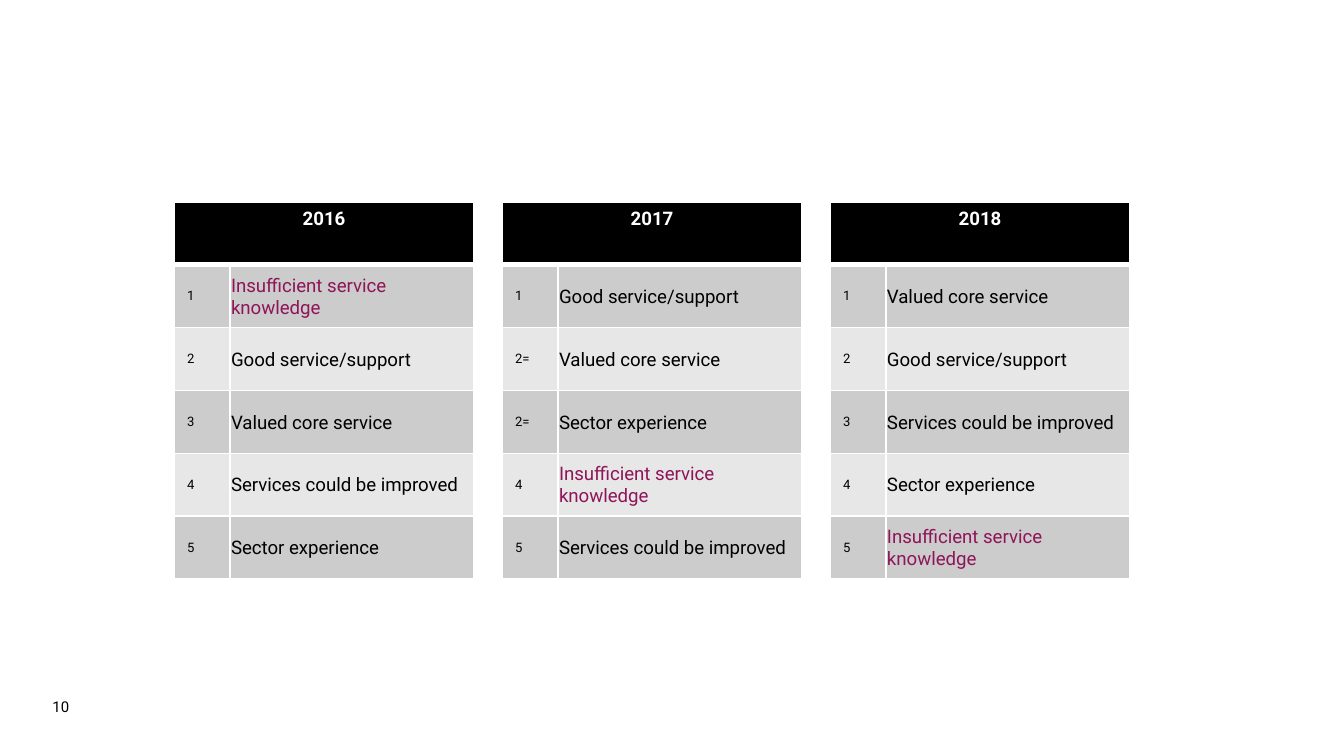
from lxml import etree
from pptx import Presentation
from pptx.dml.color import RGBColor
from pptx.enum import text
from pptx.oxml import ns
from pptx.util import Pt

BLACK, WHITE, PLUM = "000000", "FFFFFF", "8E1558"
BANDS = ["CCCCCC", "E7E7E7"]
KNOWLEDGE = "Insufficient service knowledge"
SUPPORT = "Good service/support"
CORE = "Valued core service"
IMPROVE = "Services could be improved"
SECTOR = "Sector experience"

RANKINGS = {
    "2016": [("1", KNOWLEDGE), ("2", SUPPORT), ("3", CORE), ("4", IMPROVE), ("5", SECTOR)],
    "2017": [("1", SUPPORT), ("2=", CORE), ("2=", SECTOR), ("4", KNOWLEDGE), ("5", IMPROVE)],
    "2018": [("1", CORE), ("2", SUPPORT), ("3", IMPROVE), ("4", SECTOR), ("5", KNOWLEDGE)],
}


def add_run(tf, content, size, color, bold=False):
    p = tf.paragraphs[0]
    r = p.add_run()
    r.text = content
    r.font.name = "Roboto"
    r.font.size = Pt(size)
    r.font.bold = bold
    r.font.color.rgb = RGBColor.from_string(color)
    return p


def style_cell(cell, fill, top=1, bottom=1):
    # Borders come before the fill in the cell properties
    tcPr = cell._tc.get_or_add_tcPr()
    for side, width in (("L", 1), ("R", 1), ("T", top), ("B", bottom)):
        ln = etree.SubElement(tcPr, ns.qn(f"a:ln{side}"), w=str(Pt(width)))
        solid = etree.SubElement(ln, ns.qn("a:solidFill"))
        etree.SubElement(solid, ns.qn("a:srgbClr"), val=WHITE)
    cell.fill.solid()
    cell.fill.fore_color.rgb = RGBColor.from_string(fill)


prs = Presentation()
prs.slide_width, prs.slide_height = Pt(720), Pt(405)
s = prs.slides.add_slide(prs.slide_layouts[6])

# Page number
sp = s.shapes.add_textbox(Pt(28.1), Pt(364.3), Pt(16), Pt(28))
tf = sp.text_frame
tf.word_wrap = True
tf.margin_left = tf.margin_right = tf.margin_top = tf.margin_bottom = 0
tf.vertical_anchor = text.MSO_ANCHOR.MIDDLE
add_run(tf, "10", 8, BLACK)

# One ranking table per year
for i, (year, ranking) in enumerate(RANKINGS.items()):
    left = 93.1 + i * 175.7
    frame = s.shapes.add_table(6, 2, Pt(left), Pt(108.2), Pt(161), Pt(202.2))
    table = frame.table
    table.columns[0].width, table.columns[1].width = Pt(30), Pt(131)
    for row in table.rows:
        row.height = Pt(33.7)

    # Year header across both columns
    header = table.cell(0, 0)
    header.merge(table.cell(0, 1))
    for col in range(2):
        style_cell(table.cell(0, col), BLACK, bottom=3)
    p = add_run(header.text_frame, year, 10, WHITE, bold=True)
    p.alignment = text.PP_ALIGN.CENTER

    # Rank and reason
    for n, (rank, reason) in enumerate(ranking, start=1):
        rank_cell, reason_cell = table.cell(n, 0), table.cell(n, 1)
        for cell in (rank_cell, reason_cell):
            style_cell(cell, BANDS[(n - 1) % 2], top=3 if n == 1 else 1)
            cell.vertical_anchor = text.MSO_ANCHOR.MIDDLE
        add_run(rank_cell.text_frame, rank, 7, BLACK)
        reason_cell.margin_left = reason_cell.margin_right = reason_cell.margin_top = Pt(0.7)
        reason_cell.margin_bottom = 0
        add_run(reason_cell.text_frame, reason, 10, PLUM if reason == KNOWLEDGE else BLACK)

prs.save("out.pptx")
